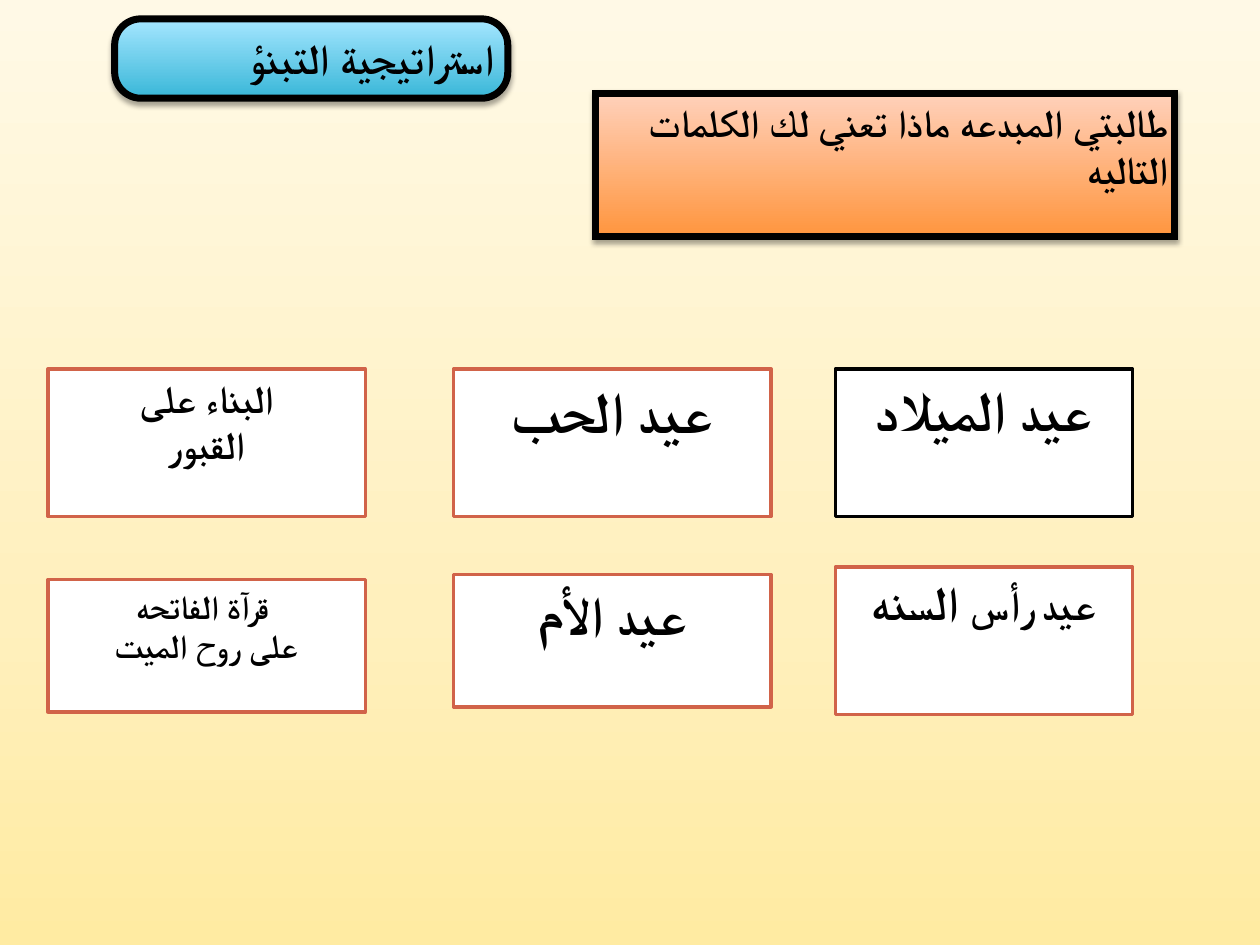
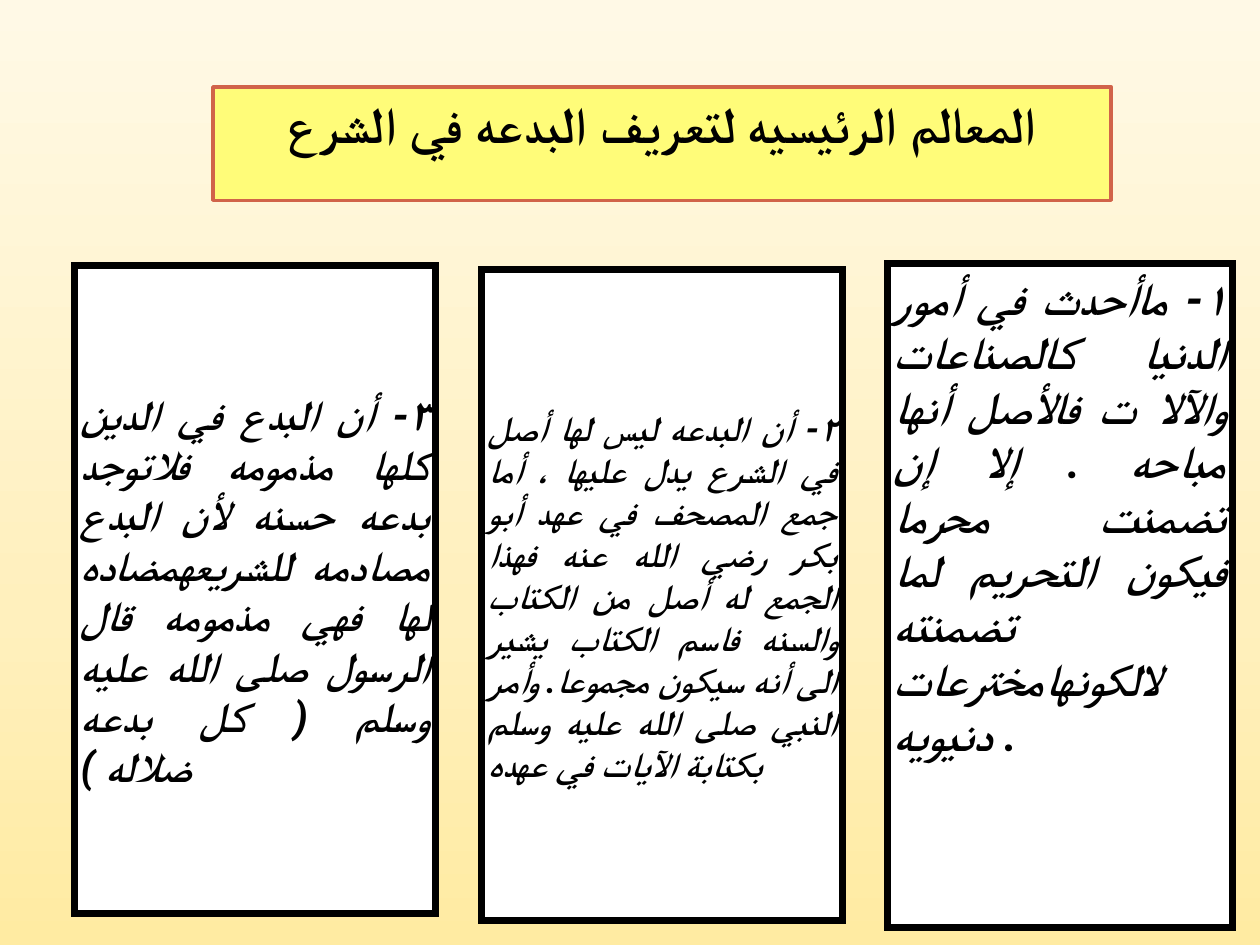
import pptx
import pptx.util
import pptx.dml.color
import pptx.enum.shapes
import pptx.enum.text
import pptx.oxml.ns
import lxml.etree

Inches = pptx.util.Inches
qn = pptx.oxml.ns.qn
ALIGN = pptx.enum.text.PP_ALIGN
ANCHOR = pptx.enum.text.MSO_ANCHOR
SHAPE = pptx.enum.shapes.MSO_SHAPE

FONT = "Roboto"
COLORS = {
    "black": "000000",
    "white": "FFFFFF",
    "brick": "D16349",
    "yellow": "FFFC79",
}
GRADIENTS = {
    "sand": [(0, "FFEBA2"), (35, "FFF0BD"), (100, "FFF9E6")],
    "sky": [(0, "39B7D8"), (100, "A5E6FF")],
    "orange": [(0, "FF953E"), (100, "FFD1BB")],
}

WORD_COLUMNS = [(0, 2.52), (3.22, 2.52), (6.25, 2.36)]
WORD_CARDS = [
    (0, 0, 1.17, "brick", 22, ["البناء على", "القبور"]),
    (1, 0, 1.17, "brick", 33, ["عيد الحب"]),
    (2, 0, 1.17, "black", 32, ["عيد الميلاد"]),
    (0, 1.67, 1.05, "brick", 19, ["قرآة الفاتحه ", "على روح الميت"]),
    (1, 1.63, 1.05, "brick", 31, ["عيد الأم"]),
    (2, 1.57, 1.17, "brick", 24, [[("عيد رأس", 24), (" السنه", 27)]]),
]

LANDMARKS = [
    (6.45, 0, 2.74, 5.27, 26, ANCHOR.TOP,
     "١- ماأحدث في أمور الدنيا كالصناعات والآلا ت فالأصل أنها مباحه . "
     "إلا إن تضمنت محرما فيكون التحريم لما تضمنته لالكونهامخترعات دنيويه ."),
    (3.23, 0.05, 2.87, 5.17, 20, ANCHOR.MIDDLE,
     "٢- أن البدعه ليس لها أصل في الشرع يدل عليها ، أما جمع المصحف في عهد "
     "أبو بكر رضي الله عنه فهذا الجمع له أصل من الكتاب والسنه فاسم الكتاب "
     "يشير الى أنه سيكون مجموعا. وأمر النبي صلى الله عليه وسلم بكتابة "
     "الآيات في عهده"),
    (0, 0.02, 2.87, 5.14, 24, ANCHOR.MIDDLE,
     "٣- أن البدع في الدين كلها مذمومه فلاتوجد بدعه حسنه لأن البدع مصادمه "
     "للشريعهمضاده لها فهي مذمومه قال الرسول صلى الله عليه وسلم "
     "( كل بدعه ضلاله )"),
]


def rgb(name):
    """Return the named colour."""
    return pptx.dml.color.RGBColor.from_string(COLORS[name])


def add_child(parent, tag, **attributes):
    """Append a DrawingML element and return it."""
    return lxml.etree.SubElement(parent, qn(tag), attributes)


def paint_gradient(fill, owner, name):
    """Fill with a named gradient that rises from the bottom edge."""
    fill.gradient()
    fill.gradient_angle = 90
    stops = owner.find(".//" + qn("a:gsLst"))
    for stop in list(stops):
        stops.remove(stop)
    for position, color in GRADIENTS[name]:
        stop = add_child(stops, "a:gs", pos=str(position * 1000))
        add_child(stop, "a:srgbClr", val=color)


def cast_shadow(panel):
    """Drop a soft black shadow below the panel."""
    effects = panel._element.spPr.find(qn("a:effectLst"))
    shadow = add_child(effects, "a:outerShdw", blurRad=str(pptx.util.Pt(3)),
                       dist=str(pptx.util.Pt(1.8)), dir="5400000", rotWithShape="0")
    color = add_child(shadow, "a:srgbClr", val=COLORS["black"])
    add_child(color, "a:alpha", val="35000")


def write_lines(panel, lines, size, align, anchor, italic):
    """Write each line as a bold paragraph; a line may be a list of sized runs."""
    frame = panel.text_frame
    frame.word_wrap = True
    frame.vertical_anchor = anchor
    frame.margin_left = frame.margin_right = Inches(0.05)
    frame.margin_top = frame.margin_bottom = Inches(0.05)
    for index, line in enumerate(lines):
        paragraph = frame.add_paragraph() if index else frame.paragraphs[0]
        paragraph.alignment = align
        font = paragraph.font
        font.name = FONT
        font.size = pptx.util.Pt(size)
        font.bold = True
        font.italic = italic
        font.color.rgb = rgb("black")
        add_child(paragraph._p.pPr.find(qn("a:defRPr")), "a:cs", typeface=FONT)
        if isinstance(line, str):
            paragraph.add_run().text = line
            continue
        for words, run_size in line:
            run = paragraph.add_run()
            run.text = words
            run.font.size = pptx.util.Pt(run_size)


def add_panel(slide, box, lines, size, fill="white", border="brick", weight=2,
              align=ALIGN.CENTER, anchor=ANCHOR.TOP, italic=False,
              outline=SHAPE.RECTANGLE):
    """Add a bordered panel with text; gradient panels also cast a shadow."""
    panel = slide.shapes.add_shape(outline, *map(Inches, box))
    panel.shadow.inherit = False
    if fill in GRADIENTS:
        paint_gradient(panel.fill, panel._element.spPr, fill)
        cast_shadow(panel)
    else:
        panel.fill.solid()
        panel.fill.fore_color.rgb = rgb(fill)
    panel.line.color.rgb = rgb(border)
    panel.line.width = pptx.util.Pt(weight)
    if weight > 2:
        add_child(panel.line._ln, "a:miter", lim="800000")
    write_lines(panel, lines, size, align, anchor, italic)
    return panel


def add_word_cards(slide, left, top):
    """Place the six word cards in three columns from the given corner."""
    for column, drop, height, border, size, lines in WORD_CARDS:
        offset, width = WORD_COLUMNS[column]
        add_panel(slide, (left + offset, top + drop, width, height), lines, size,
                  border=border)


def add_landmarks(slide, left, top):
    """Place the three numbered landmarks from the given corner."""
    for offset, drop, width, height, size, anchor, text in LANDMARKS:
        add_panel(slide, (left + offset, top + drop, width, height), [text], size,
                  border="black", weight=4, align=ALIGN.JUSTIFY, anchor=anchor,
                  italic=True)


def build_prediction_slide(slide):
    """Build the prediction strategy slide."""
    add_word_cards(slide, 0.38, 2.93)
    heading = {"border": "black", "weight": 4, "align": ALIGN.RIGHT}
    strategy = add_panel(slide, (0.91, 0.15, 3.12, 0.63), ["استراتيجية التبنؤ"], 24,
                         fill="sky", outline=SHAPE.ROUNDED_RECTANGLE, **heading)
    strategy.adjustments[0] = 0.33
    add_panel(slide, (4.73, 0.74, 4.59, 1.14),
              ["طالبتي المبدعه ماذا تعني لك الكلمات التاليه"], 22,
              fill="orange", **heading)


def build_landmarks_slide(slide):
    """Build the slide on the landmarks of the definition."""
    add_panel(slide, (1.69, 0.69, 7.13, 0.9),
              ["المعالم الرئيسيه لتعريف البدعه في الشرع"], 29, fill="yellow")
    add_landmarks(slide, 0.59, 2.09)


def main():
    """Build and save the presentation."""
    deck = pptx.Presentation()
    deck.slide_width, deck.slide_height = Inches(10), Inches(7.5)
    master = deck.slide_master
    paint_gradient(master.background.fill, master._element, "sand")
    for build in (build_prediction_slide, build_landmarks_slide):
        build(deck.slides.add_slide(deck.slide_layouts[6]))
    deck.save("out.pptx")


if __name__ == "__main__":
    main()
